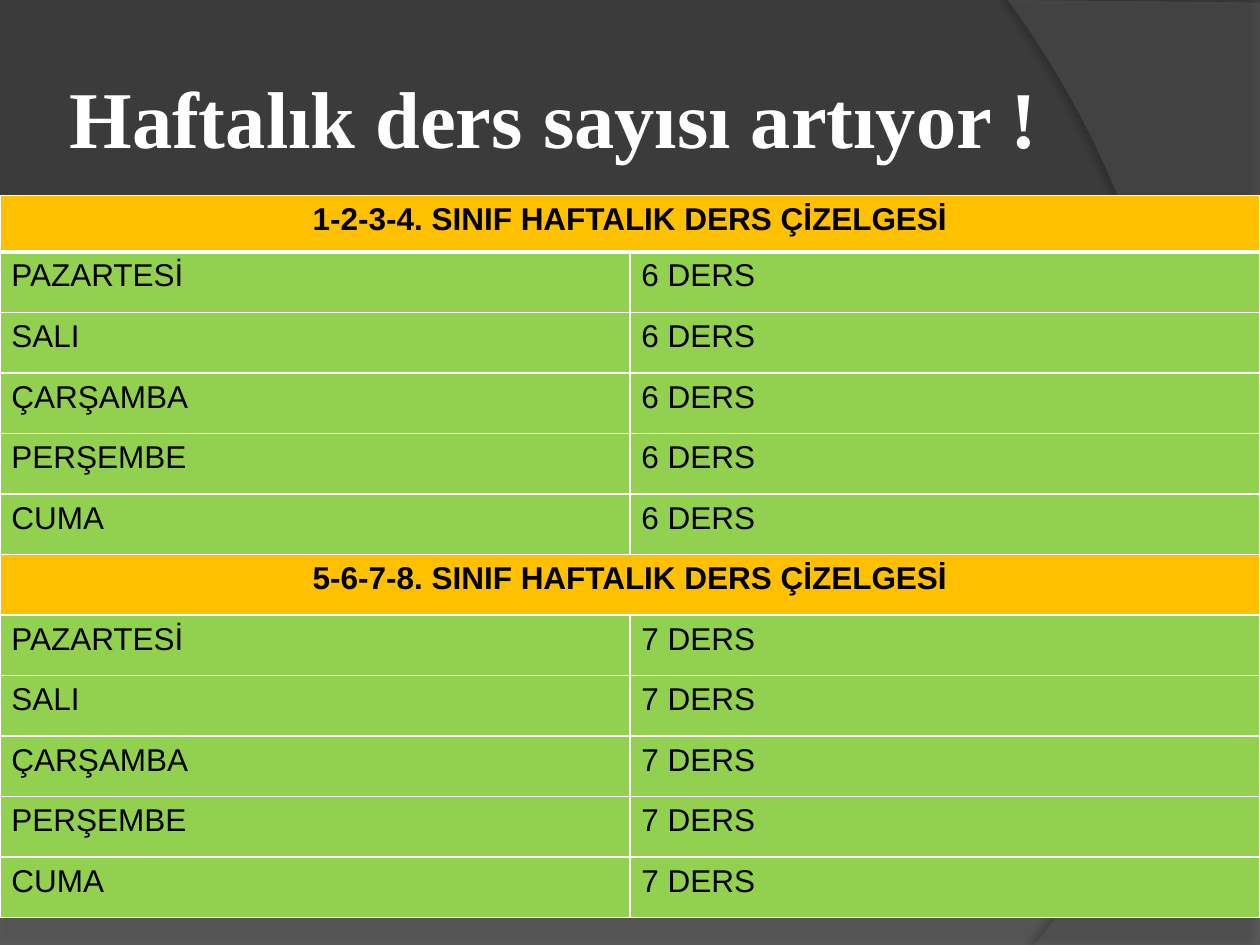
from dataclasses import dataclass

from lxml import etree
from pptx import Presentation
from pptx import util as u
from pptx.dml.color import RGBColor
from pptx.enum import text
from pptx.oxml import ns


@dataclass(frozen=True)
class Theme:
    background: str = "3B3B3B"
    wave: str = "7F7F7F"
    side: str = "5E5E5E"
    shadow: str = "000000"
    heading: str = "FFC000"
    lesson: str = "92D050"
    border: str = "FFFFFF"
    title_text: str = "FFFFFF"
    cell_text: str = "000000"
    title_font: str = "Times New Roman"
    cell_font: str = "Arial"
    title_size: int = 46
    cell_size: int = 18


THEME = Theme()
DAYS = ("PAZARTESİ", "SALI", "ÇARŞAMBA", "PERŞEMBE", "CUMA")
TIMETABLES = (("1-2-3-4", 6), ("5-6-7-8", 7))
WIDTH, HEIGHT = 25.4, 19.05


def apply(target, values):
    for name, value in values.items():
        setattr(target, name, value)


def set_fill(fill, color):
    fill.solid()
    fill.fore_color.rgb = RGBColor.from_string(color)


def add_child(parent, tag, **attributes):
    return etree.SubElement(parent, ns.qn(tag), attributes)


def add_color(parent, color, alpha):
    node = add_child(parent, "a:srgbClr", val=color)
    add_child(node, "a:alpha", val=str(alpha * 1000))


def write(frame, content, font, color, alignment, margins, anchor):
    """Fill a text frame or a cell with one formatted paragraph."""
    apply(frame, dict(zip(
        ("margin_left", "margin_top", "margin_right", "margin_bottom"),
        map(u.Cm, margins))))
    frame.vertical_anchor = anchor
    body = getattr(frame, "text_frame", frame)
    body.text = content
    paragraph = body.paragraphs[0]
    paragraph.alignment = alignment
    run = paragraph.runs[0]
    apply(run.font, font)
    run.font.color.rgb = RGBColor.from_string(color)


def curve(points, steps=40):
    """Points along a cubic curve, given its four control points in cm."""
    weights = (1, 3, 3, 1)
    for step in range(steps + 1):
        t = step / steps
        yield tuple(
            sum(weight * (1 - t) ** (3 - i) * t ** i * point[axis]
                for i, (weight, point) in enumerate(zip(weights, points)))
            for axis in (0, 1))


def add_curved_area(slide, corners, controls, color, alpha, shadow):
    """Draw a translucent area with straight sides and one curved edge."""
    outline = [(u.Cm(x), u.Cm(y)) for x, y in (*corners, *curve(controls))]
    builder = slide.shapes.build_freeform(*outline[0])
    builder.add_line_segments(outline[1:], close=True)
    shape = builder.convert_to_shape()
    set_fill(shape.fill, color)
    shape.line.fill.background()
    properties = shape.element.spPr
    fill_color = properties.find(ns.qn("a:solidFill"))[0]
    add_child(fill_color, "a:alpha", val=str(alpha * 1000))
    opacity, blur, distance, angle = shadow
    effects = add_child(properties, "a:effectLst")
    outer = add_child(effects, "a:outerShdw", blurRad=str(u.Pt(blur)),
                      dist=str(u.Pt(distance)), dir=str(angle * 60000))
    add_color(outer, THEME.shadow, opacity)


def add_title(slide, content):
    title = slide.shapes.title
    apply(title, {"left": u.Cm(1.27), "top": u.Cm(0.76),
                  "width": u.Cm(20.75), "height": u.Cm(3.18)})
    write(title.text_frame, content,
          {"name": THEME.title_font, "size": u.Pt(THEME.title_size), "bold": True},
          THEME.title_text, text.PP_ALIGN.LEFT, (0.13,) * 4,
          text.MSO_ANCHOR.MIDDLE)
    title.text_frame.auto_size = text.MSO_AUTO_SIZE.NONE
    # Bring the title in front of the curved areas
    title.element.getparent().append(title.element)


def set_borders(cell, top, bottom):
    properties = cell._tc.get_or_add_tcPr()
    for side, width in (("L", 1), ("R", 1), ("T", top), ("B", bottom)):
        line = add_child(properties, f"a:ln{side}", w=str(u.Pt(width)))
        fill = add_child(line, "a:solidFill")
        add_child(fill, "a:srgbClr", val=THEME.border)


def add_timetable(slide, top=3.94, first_height=1.14, row_height=1.22):
    rows = []
    for classes, count in TIMETABLES:
        rows.append((f"{classes}. SINIF HAFTALIK DERS ÇİZELGESİ",))
        rows += [(day, f"{count} DERS") for day in DAYS]
    heights = [first_height] + [row_height] * (len(rows) - 1)
    table = slide.shapes.add_table(
        len(rows), 2, 0, u.Cm(top), u.Cm(WIDTH), u.Cm(sum(heights))).table
    for index, (values, height) in enumerate(zip(rows, heights)):
        table.rows[index].height = u.Cm(height)
        heading = len(values) == 1
        if heading:
            table.cell(index, 0).merge(table.cell(index, 1))
        for column in range(2):
            cell = table.cell(index, column)
            # A thick rule separates the first heading from its days
            set_borders(cell, 3 if index == 1 else 1, 3 if index == 0 else 1)
            set_fill(cell.fill, THEME.heading if heading else THEME.lesson)
            if column < len(values):
                write(cell, values[column],
                      {"name": THEME.cell_font, "size": u.Pt(THEME.cell_size),
                       "bold": heading},
                      THEME.cell_text,
                      text.PP_ALIGN.CENTER if heading else text.PP_ALIGN.LEFT,
                      (0.23, 0.13, 0.23, 0.13), text.MSO_ANCHOR.TOP)


def main():
    presentation = Presentation()
    apply(presentation, {"slide_width": u.Cm(WIDTH), "slide_height": u.Cm(HEIGHT)})
    slide = presentation.slides.add_slide(presentation.slide_layouts[5])
    set_fill(slide.background.fill, THEME.background)

    # Background: bottom wave, then right-hand arc
    add_curved_area(
        slide, [(0, 17.91), (0, 19.08), (WIDTH, 19.08)],
        [(WIDTH, 13.21), (14.2, 18.52), (9.93, 18.26), (0, 17.91)],
        THEME.wave, 45, (35, 4, 3.5, 270))
    add_curved_area(
        slide, [(WIDTH, 0.05), (WIDTH, HEIGHT)],
        [(20.85, HEIGHT), (23.75, 15.72), (25.86, 7.62), (20.32, 0)],
        THEME.side, 40, (45, 4, 4, 180))

    # Content
    add_title(slide, "Haftalık ders sayısı artıyor !")
    add_timetable(slide)
    presentation.save("out.pptx")


if __name__ == "__main__":
    main()
